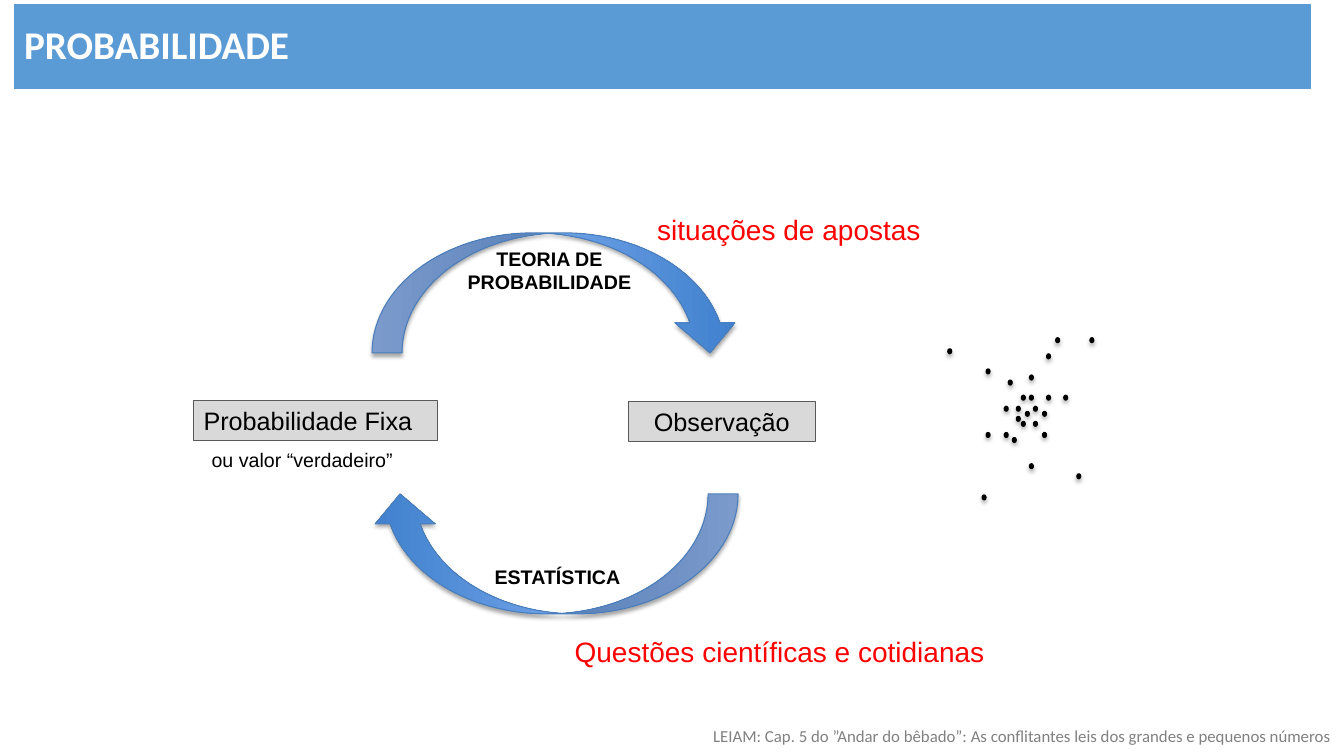
from dataclasses import dataclass

from lxml.etree import SubElement
from pptx import Presentation
from pptx.dml.color import RGBColor
from pptx.enum.shapes import MSO_SHAPE
from pptx.enum.text import MSO_ANCHOR, MSO_AUTO_SIZE, PP_ALIGN
from pptx.oxml.ns import qn
from pptx.shapes.autoshape import Shape
from pptx.slide import Slide
from pptx.util import Inches, Pt


@dataclass(frozen=True)
class Theme:
    body: str = "Arial"
    heading: str = "Calibri"
    banner: str = "5B9BD5"
    white: str = "FFFFFF"
    ink: str = "000000"
    accent: str = "FF0000"
    muted: str = "808080"
    box: str = "D9D9D9"
    box_line: str = "595959"
    arrow_tail: str = "9BC1FF"
    arrow_head: str = "3F80CD"
    arrow_line: str = "4A7EBB"
    title_size: int = 28
    example_size: int = 20
    box_size: int = 18
    label_size: int = 14
    source_size: int = 12
    line_width: float = 0.75


THEME = Theme()
LEFT, CENTER, RIGHT = PP_ALIGN.LEFT, PP_ALIGN.CENTER, PP_ALIGN.RIGHT


@dataclass(frozen=True)
class Area:
    left: float
    top: float
    width: float
    height: float

    def lengths(self) -> tuple:
        return tuple(Inches(v) for v in (self.left, self.top, self.width, self.height))


@dataclass(frozen=True)
class Label:
    text: str
    area: Area
    size: int
    color: str = THEME.ink
    align: PP_ALIGN = LEFT
    bold: bool = False
    font: str = THEME.body
    boxed: bool = False


@dataclass(frozen=True)
class CycleArrow:
    area: Area
    rotation: int


TITLE = Label("PROBABILIDADE", Area(0.14, 0.2, 12.86, 0.53), THEME.title_size,
              THEME.white, bold=True, font=THEME.heading)

ARROWS = [
    CycleArrow(Area(4.92, 1.08, 1.19, 3.65), 270),
    CycleArrow(Area(4.9, 3.67, 1.19, 3.65), 90),
]

LABELS = [
    Label("Probabilidade Fixa", Area(1.92, 3.97, 2.42, 0.4), THEME.box_size, boxed=True),
    Label("ou valor “verdadeiro”", Area(2, 4.39, 2.17, 0.34), THEME.label_size),
    Label("Observação", Area(6.23, 3.98, 1.86, 0.4), THEME.box_size,
          align=CENTER, boxed=True),
    Label("TEORIA DE PROBABILIDADE", Area(4.17, 2.4, 2.56, 0.57), THEME.label_size,
          align=CENTER, bold=True),
    Label("ESTATÍSTICA", Area(4.25, 5.56, 2.56, 0.34), THEME.label_size,
          align=CENTER, bold=True),
    Label("situações de apostas", Area(6.42, 2.06, 3.97, 0.44), THEME.example_size,
          THEME.accent),
    Label("Questões científicas e cotidianas", Area(5.6, 6.25, 4.91, 0.44),
          THEME.example_size, THEME.accent),
    Label("LEIAM: Cap. 5 do ”Andar do bêbado”: As conflitantes leis dos grandes"
          " e pequenos números ", Area(2.56, 7.15, 10.78, 0.3), THEME.source_size,
          THEME.muted, RIGHT, font=THEME.heading),
]

DOT_WIDTH, DOT_HEIGHT = 0.04, 0.05
DOTS = [
    (10.17, 4.08), (10.25, 4.18), (10.34, 4.08), (10.04, 4.34), (10.34, 4.29),
    (10.13, 3.92), (10.25, 4.03), (10.08, 4.13), (10.68, 4.7), (9.96, 4.03),
    (9.4, 3.46), (10.21, 3.92), (10.38, 3.51), (10.21, 3.72), (10, 3.77),
    (10.55, 3.92), (10.21, 4.6), (10.13, 4.18), (9.78, 4.29), (10.81, 3.35),
    (10.47, 3.35), (10.38, 3.92), (9.96, 4.29), (9.74, 4.91), (9.78, 3.66),
    (10.08, 4.03),
]


def paint(sp: Shape, fill: str, line: str) -> None:
    sp.fill.solid()
    sp.fill.fore_color.rgb = RGBColor.from_string(fill)
    outline(sp, line)


def outline(sp: Shape, color: str) -> None:
    sp.line.color.rgb = RGBColor.from_string(color)
    sp.line.width = Pt(THEME.line_width)


def drop_shadow(sp: Shape) -> None:
    sp.shadow.inherit = False
    effects = sp._element.spPr.find(qn("a:effectLst"))
    shadow = SubElement(effects, qn("a:outerShdw"), blurRad=str(Pt(3.1)),
                        dist=str(Pt(1.8)), dir="5400000", rotWithShape="0")
    color = SubElement(shadow, qn("a:srgbClr"), val=THEME.ink)
    SubElement(color, qn("a:alpha"), val="35000")


def write(sp: Shape, label: Label, anchor: MSO_ANCHOR = MSO_ANCHOR.TOP) -> None:
    tf = sp.text_frame
    tf.word_wrap = True
    tf.auto_size = MSO_AUTO_SIZE.SHAPE_TO_FIT_TEXT
    tf.vertical_anchor = anchor
    p = tf.paragraphs[0]
    p.alignment = label.align
    r = p.add_run()
    r.text = label.text
    r.font.name = label.font
    r.font.size = Pt(label.size)
    r.font.bold = label.bold
    r.font.color.rgb = RGBColor.from_string(label.color)


def add_title(s: Slide) -> None:
    sp = s.shapes.title
    sp.left, sp.top, sp.width, sp.height = TITLE.area.lengths()
    paint(sp, THEME.banner, THEME.banner)
    write(sp, TITLE, MSO_ANCHOR.MIDDLE)
    sp.text_frame.paragraphs[0].line_spacing = 0.9


def add_arrow(s: Slide, arrow: CycleArrow) -> None:
    sp = s.shapes.add_shape(MSO_SHAPE.CURVED_LEFT_ARROW, *arrow.area.lengths())
    sp.rotation = arrow.rotation
    for i, value in enumerate((0.25, 0.5, 0.25)):
        sp.adjustments[i] = value
    sp.fill.gradient()
    sp.fill.gradient_angle = 270
    for stop, color in zip(sp.fill.gradient_stops, (THEME.arrow_tail, THEME.arrow_head)):
        stop.color.rgb = RGBColor.from_string(color)
    outline(sp, THEME.arrow_line)
    drop_shadow(sp)


def add_label(s: Slide, label: Label) -> None:
    if label.boxed:
        sp = s.shapes.add_shape(MSO_SHAPE.RECTANGLE, *label.area.lengths())
        sp.shadow.inherit = False
        paint(sp, THEME.box, THEME.box_line)
    else:
        sp = s.shapes.add_textbox(*label.area.lengths())
    write(sp, label)


def add_dot(s: Slide, left: float, top: float) -> None:
    area = Area(left, top, DOT_WIDTH, DOT_HEIGHT)
    sp = s.shapes.add_shape(MSO_SHAPE.OVAL, *area.lengths())
    paint(sp, THEME.ink, THEME.ink)
    drop_shadow(sp)


def main() -> None:
    prs = Presentation()
    prs.slide_width, prs.slide_height = Inches(13.33), Inches(7.5)
    s = prs.slides.add_slide(prs.slide_layouts[5])
    add_title(s)
    for arrow in ARROWS:
        add_arrow(s, arrow)
    for label in LABELS:
        add_label(s, label)
    for left, top in DOTS:
        add_dot(s, left, top)
    prs.save("out.pptx")


if __name__ == "__main__":
    main()
